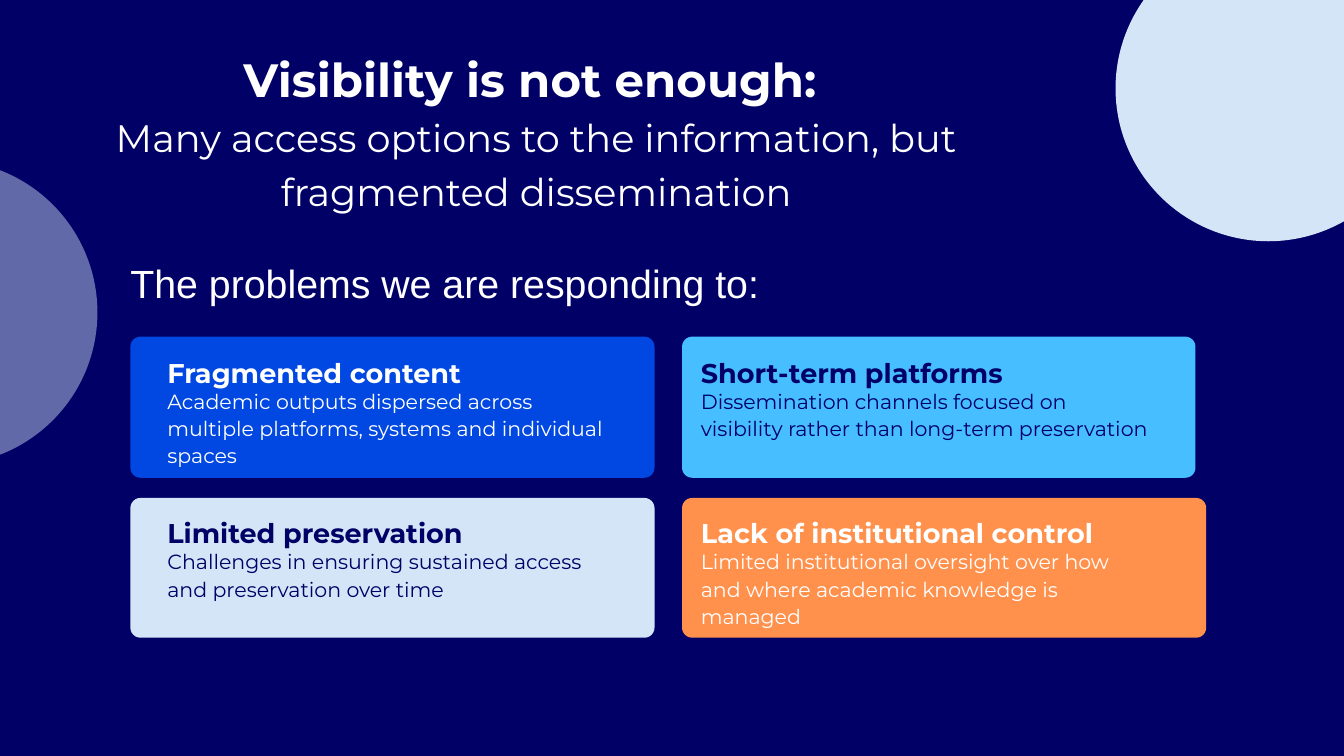
from lxml import etree
from pptx import Presentation
from pptx.dml.color import RGBColor
from pptx.enum.shapes import MSO_SHAPE
from pptx.enum.text import MSO_ANCHOR, PP_ALIGN
from pptx.oxml.ns import qn
from pptx.util import Pt

PX = 9144  # EMU per px, 100 px to the inch
ROUNDED, OVAL = MSO_SHAPE.ROUNDED_RECTANGLE, MSO_SHAPE.OVAL
TOP = MSO_ANCHOR.TOP
LEFT, CENTER = PP_ALIGN.LEFT, PP_ALIGN.CENTER

NAVY, WHITE, PALE = "000066", "FFFFFF", "D4E5F7"
BLUE, SKY, ORANGE = "0048E1", "46BEFF", "FF914D"

TITLE = {"name": "Montserrat", "size": Pt(50), "bold": True}
SUBTITLE = {"name": "Montserrat", "size": Pt(41), "bold": False}
LEAD = {"name": "Arial", "size": Pt(42.1)}
HEADING = {"name": "Montserrat", "size": Pt(29), "bold": True}
BODY = {"name": "Montserrat", "size": Pt(22)}

CORNER = 15
# Columns: left edge, text inset; rows: top edge, height, heading and body offsets
COLUMNS = [(194, 55), (1015, 28)]
ROWS = [(501, 210, 25, 74), (741, 208, 23, 73)]
# Column, row, card width, fill, text colour, heading, body
PROBLEMS = [
    (0, 0, 780, BLUE, WHITE, "Fragmented content",
     "Academic outputs dispersed across multiple platforms, systems and individual spaces"),
    (1, 0, 764, SKY, NAVY, "Short-term platforms",
     "Dissemination channels focused on visibility rather than long-term preservation"),
    (0, 1, 780, PALE, NAVY, "Limited preservation",
     "Challenges in ensuring sustained access and preservation over time"),
    (1, 1, 780, ORANGE, WHITE, "Lack of institutional control",
     "Limited institutional oversight over how and where academic knowledge is managed"),
]


def emu(*lengths):
    return [length * PX for length in lengths]


def rgb(color):
    return RGBColor.from_string(color)


def add_filled(slide, kind, box, color):
    shape = slide.shapes.add_shape(kind, *emu(*box))
    shape.shadow.inherit = False
    shape.fill.solid()
    shape.fill.fore_color.rgb = rgb(color)
    shape.line.fill.background()
    return shape


def prepare_frame(frame):
    settings = {"word_wrap": True, "vertical_anchor": TOP, "margin_left": 0,
                "margin_top": 0, "margin_right": 0, "margin_bottom": 0}
    for key, value in settings.items():
        setattr(frame, key, value)


def write(paragraph, text, style, color, spacing, align=LEFT):
    paragraph.alignment = align
    paragraph.line_spacing = Pt(spacing)
    paragraph.space_before = Pt(0)
    run = paragraph.add_run()
    run.text = text
    for key, value in style.items():
        setattr(run.font, key, value)
    run.font.color.rgb = rgb(color)


def add_text(slide, box, text, style, color, spacing):
    frame = slide.shapes.add_textbox(*emu(*box)).text_frame
    prepare_frame(frame)
    write(frame.paragraphs[0], text, style, color, spacing)


def add_circle(slide, box, opacity=100):
    circle = add_filled(slide, OVAL, box, PALE)
    if opacity < 100:
        fill_color = circle.fill._xPr.find(qn("a:solidFill"))[0]
        etree.SubElement(fill_color, qn("a:alpha"), val=str(opacity * 1000))


def add_title(slide, box):
    title = slide.shapes.title
    title.left, title.top, title.width, title.height = emu(*box)
    frame = title.text_frame
    prepare_frame(frame)
    write(frame.paragraphs[0], "Visibility is not enough: ", TITLE, WHITE, 70.1, CENTER)
    write(frame.add_paragraph(),
          "Many access options to the information, but fragmented dissemination",
          SUBTITLE, WHITE, 57.5, CENTER)


def add_problem(slide, box, inset, offsets, fill, ink, heading, body):
    left, top, width, height = box
    card = add_filled(slide, ROUNDED, box, fill)
    card.adjustments[0] = CORNER / height
    heading_y, body_y = offsets
    add_text(slide, (left + inset, top + body_y, 669, 118), body, BODY, ink, 29)
    add_text(slide, (left + inset, top + heading_y, 593, 51), heading, HEADING, ink, 38.3)


def main():
    deck = Presentation()
    deck.slide_width, deck.slide_height = emu(2000, 1125)
    slide = deck.slides.add_slide(deck.slide_layouts[5])
    slide.background.fill.solid()
    slide.background.fill.fore_color.rgb = rgb(NAVY)

    # Problem cards
    for column, row, width, fill, ink, heading, body in PROBLEMS:
        left, inset = COLUMNS[column]
        top, height, *offsets = ROWS[row]
        add_problem(slide, (left, top, width, height), inset, offsets,
                    fill, ink, heading, body)

    # Lead-in above the cards
    add_text(slide, (194, 383, 1298, 70), "The problems we are responding to:",
             LEAD, WHITE, 52.4)

    # Decorative circles
    add_circle(slide, (-309, 238, 454, 454), opacity=46)
    add_circle(slide, (1660, -96, 455, 455))

    add_title(slide, (125, 61, 1347, 253))
    deck.save("out.pptx")


if __name__ == "__main__":
    main()
